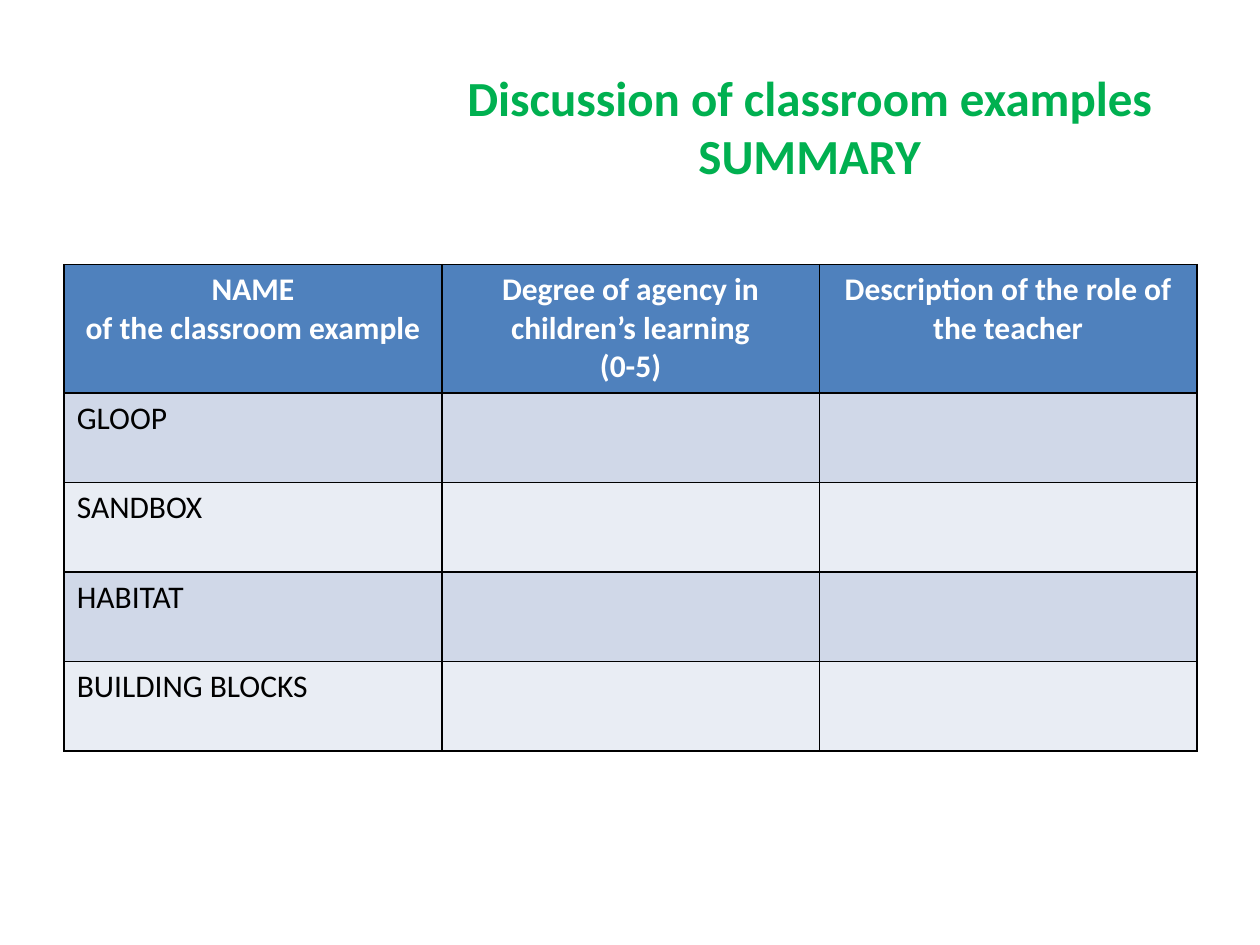
import pptx
import pptx.util
import pptx.dml.color
import pptx.enum.text
import pptx.oxml
import pptx.oxml.ns

Inches = pptx.util.Inches
Pt = pptx.util.Pt
ALIGN = pptx.enum.text.PP_ALIGN
ANCHOR = pptx.enum.text.MSO_ANCHOR

TITLE = "Discussion of classroom examples SUMMARY"
HEADERS = [
    ["NAME", "of the classroom example"],
    ["Degree of agency in children’s learning", "(0-5)"],
    ["Description of the role of the teacher"],
]
EXAMPLES = ["GLOOP", "SANDBOX", "HABITAT", "BUILDING BLOCKS"]

TITLE_FORMAT = {"name": "Calibri", "size": Pt(28), "bold": True}
HEADER_FORMAT = {"name": "Calibri", "size": Pt(18), "bold": True}
BODY_FORMAT = {"name": "Calibri", "size": Pt(18), "bold": False}
HEADER_FILL = "4F81BD"
BAND_FILLS = ["D0D8E8", "E9EDF4"]
HEADER_HEIGHT, ROW_HEIGHT = 1.02, 0.71


def color(value):
    return pptx.dml.color.RGBColor.from_string(value)


def write(frame, lines, font_format, font_color, alignment):
    for index, line in enumerate(lines):
        paragraph = frame.paragraphs[0] if index == 0 else frame.add_paragraph()
        paragraph.text = line
        paragraph.alignment = alignment
        for name, value in font_format.items():
            setattr(paragraph.font, name, value)
        paragraph.font.color.rgb = color(font_color)


def style_cell(cell, fill):
    properties = cell._tc.get_or_add_tcPr()
    for side in ("lnL", "lnR", "lnT", "lnB"):
        properties.append(pptx.oxml.parse_xml(
            f'<a:{side} {pptx.oxml.ns.nsdecls("a")} w="12700"><a:solidFill>'
            f'<a:srgbClr val="000000"/></a:solidFill></a:{side}>'))
    cell.fill.solid()
    cell.fill.fore_color.rgb = color(fill)


def add_title(slide):
    box = slide.shapes.add_textbox(Inches(3.35), Inches(0.3), Inches(6.15), Inches(1.4))
    box.text_frame.word_wrap = True
    box.text_frame.vertical_anchor = ANCHOR.MIDDLE
    write(box.text_frame, [TITLE], TITLE_FORMAT, "00B050", ALIGN.CENTER)


def add_summary_table(slide):
    rows = [HEADERS] + [[[example], [""], [""]] for example in EXAMPLES]
    heights = [HEADER_HEIGHT] + [ROW_HEIGHT] * len(EXAMPLES)
    table = slide.shapes.add_table(
        len(rows), len(HEADERS), Inches(0.51), Inches(2.1),
        Inches(8.99), Inches(sum(heights))).table
    for row_index, row in enumerate(rows):
        table.rows[row_index].height = Inches(heights[row_index])
        for column_index, lines in enumerate(row):
            cell = table.cell(row_index, column_index)
            if row_index == 0:
                style_cell(cell, HEADER_FILL)
                write(cell.text_frame, lines, HEADER_FORMAT, "FFFFFF", ALIGN.CENTER)
            else:
                style_cell(cell, BAND_FILLS[(row_index - 1) % 2])
                write(cell.text_frame, lines, BODY_FORMAT, "000000", ALIGN.LEFT)


def main():
    presentation = pptx.Presentation()
    presentation.slide_width = Inches(10)
    presentation.slide_height = Inches(7.5)
    slide = presentation.slides.add_slide(presentation.slide_layouts[6])
    add_title(slide)
    add_summary_table(slide)
    presentation.save("out.pptx")


if __name__ == "__main__":
    main()
